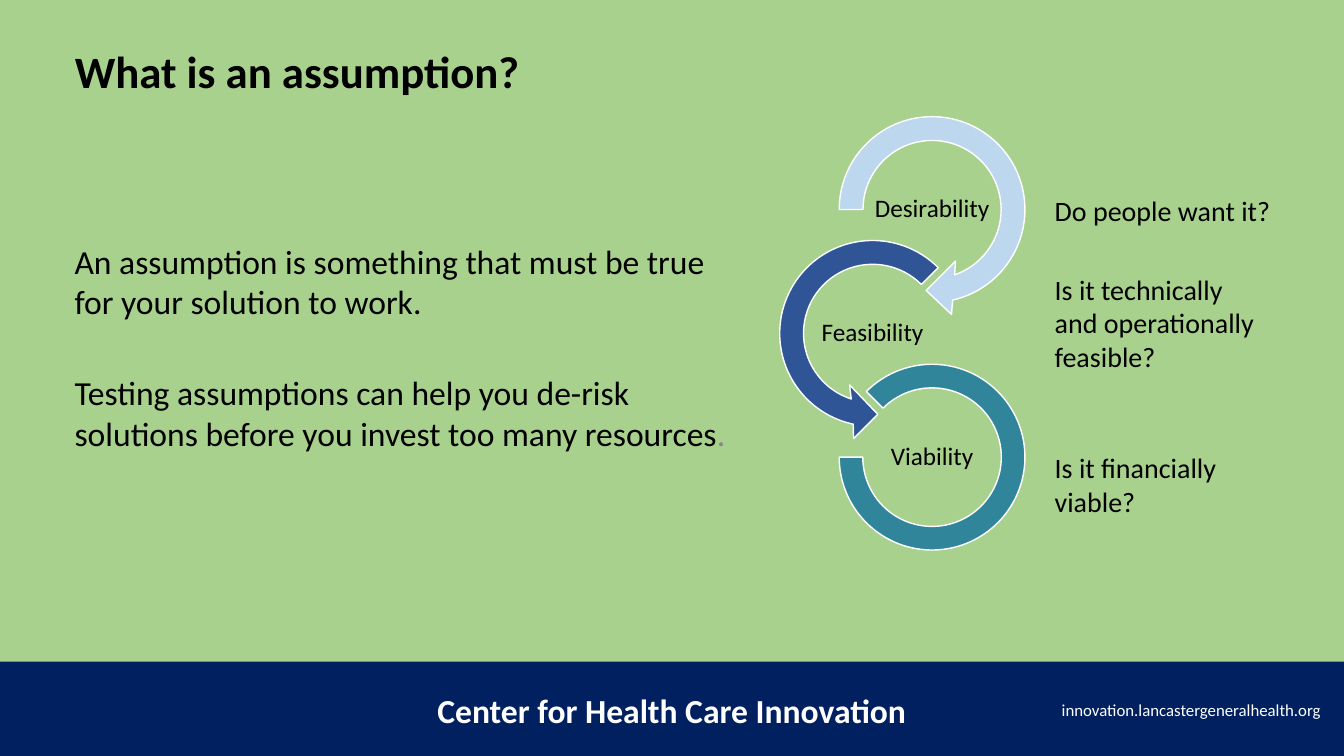
from math import cos, radians, sin, tan

from lxml.etree import Element
from pptx import Presentation
from pptx.dml.color import RGBColor
from pptx.enum.shapes import MSO_SHAPE as Preset
from pptx.enum.text import MSO_ANCHOR as Anchor, PP_ALIGN as Align
from pptx.oxml.ns import qn
from pptx.util import Cm, Pt

GREEN = RGBColor(0xA9, 0xD1, 0x8E)
NAVY = RGBColor(0x00, 0x20, 0x60)
PALE_BLUE = RGBColor(0xBD, 0xD7, 0xEE)
BLUE = RGBColor(0x2F, 0x55, 0x97)
TEAL = RGBColor(0x31, 0x85, 0x9B)
WHITE = RGBColor(0xFF, 0xFF, 0xFF)
BLACK = RGBColor(0x00, 0x00, 0x00)
GREY = RGBColor(0x88, 0x88, 0x88)

PAGE_WIDTH, PAGE_HEIGHT = 33.87, 19.05
BAND_TOP = 16.67
OUTER, INNER = 2.34, 1.74
RING_RIGHT, RING_LEFT = 23.49, 21.99
RING_TOP, RING_STEP = 5.28, 3.12
ARC_CURVES = 3


def style(para, size, color=BLACK, bold=False, align=Align.LEFT):
    para.alignment = align
    font = para.font
    font.name, font.size, font.bold = "Calibri", Pt(size), bold
    font.color.rgb = color


def add_text(page, place, lines, size, inset=(0.25, 0.13), gap=0, anchor=Anchor.TOP,
             spacing=None, **look):
    box = page.shapes.add_textbox(*map(Cm, place))
    frame = box.text_frame
    frame.word_wrap = True
    frame.vertical_anchor = anchor
    frame.margin_left = frame.margin_right = Cm(inset[0])
    frame.margin_top = frame.margin_bottom = Cm(inset[1])
    for index, line in enumerate(lines):
        para = frame.add_paragraph() if index else frame.paragraphs[0]
        para.text = line
        style(para, size, **look)
        if index:
            para.space_before = Pt(gap)
        if spacing:
            para.line_spacing = spacing
    return frame


def paint(shape, fill, outline=None):
    shape.shadow.inherit = False
    shape.fill.solid()
    shape.fill.fore_color.rgb = fill
    if outline is None:
        shape.line.fill.background()
    else:
        shape.line.color.rgb = outline
        shape.line.width = Pt(1)


def arc(center, radius, start, end):
    sweep = radians(end - start) / ARC_CURVES
    handle = 4 / 3 * tan(sweep / 4)

    def spot(angle, pull):
        return (center[0] + radius * (cos(angle) - pull * sin(angle)),
                center[1] + radius * (sin(angle) + pull * cos(angle)))

    points = [spot(radians(start), 0)]
    for step in range(ARC_CURVES):
        first = radians(start) + step * sweep
        last = first + sweep
        points += [spot(first, handle), spot(last, -handle), spot(last, 0)]
    return points


def bend(lines):
    for index in range(0, len(lines), 3):
        curve = Element(qn("a:cubicBezTo"))
        lines[index].addprevious(curve)
        for line in lines[index:index + 3]:
            curve.append(line[0])
            line.getparent().remove(line)


def add_ring_arrow(page, center, start, outer_end, inner_end, head, fill):
    outer = arc(center, OUTER, start, outer_end)
    inner = arc(center, INNER, inner_end, start)
    corners = [(Cm(x), Cm(y)) for x, y in outer + head + inner]
    builder = page.shapes.build_freeform(*corners[0])
    builder.add_line_segments(corners[1:])
    arrow = builder.convert_to_shape()
    lines = list(arrow.element.iter(qn("a:lnTo")))
    count = 3 * ARC_CURVES
    bend(lines[:count])
    bend(lines[-count:])
    paint(arrow, fill, WHITE)


def add_open_ring(page, center, fill):
    x, y = center
    ring = page.shapes.add_shape(Preset.BLOCK_ARC, Cm(x - OUTER), Cm(y - OUTER),
                                 Cm(2 * OUTER), Cm(2 * OUTER))
    for index, value in enumerate((135, 108, 0.127)):
        ring.adjustments[index] = value
    paint(ring, fill, WHITE)


def add_title(page, text):
    title = page.shapes.title
    title.left, title.top, title.width, title.height = map(Cm, (1.63, 0.97, 17.45, 1.7))
    title.text_frame.text = text
    title.text_frame.vertical_anchor = Anchor.TOP
    style(title.text_frame.paragraphs[0], 32, bold=True)


def add_footer(page):
    band = page.shapes.add_shape(Preset.RECTANGLE, 0, Cm(BAND_TOP), Cm(PAGE_WIDTH),
                                 Cm(PAGE_HEIGHT - BAND_TOP))
    paint(band, NAVY)
    add_text(page, (10.54, 17.25, 12.78, 1.27), ["Center for Health Care Innovation"], 24,
             color=WHITE, bold=True, align=Align.CENTER)
    add_text(page, (24.22, 17.5, 9.32, 0.76), ["innovation.lancastergeneralhealth.org"], 12,
             color=WHITE, align=Align.RIGHT)


def add_explanation(page):
    frame = add_text(page, (1.63, 5.93, 17.45, 5.8), [
        "An assumption is something that must be true for your solution to work.",
        "Testing assumptions can help you de-risk solutions before you invest too many resources",
    ], 24, gap=36.5)
    span = frame.paragraphs[-1].add_run()
    span.text = "."
    span.font.color.rgb = GREY


def add_rings(page):
    centers = [(x, RING_TOP + row * RING_STEP)
               for row, x in enumerate((RING_RIGHT, RING_LEFT, RING_RIGHT))]
    add_ring_arrow(page, centers[0], 180, 437.2, 430.9,
                   [(23.98, 7.92), (23.34, 7.32), (24.08, 6.58)], PALE_BLUE)
    add_ring_arrow(page, centers[1], 315, 102, 108,
                   [(21.51, 11.05), (22.12, 10.44), (21.41, 9.7)], BLUE)
    add_open_ring(page, centers[2], TEAL)
    for (x, y), label in zip(centers, ("Desirability", "Feasibility", "Viability")):
        add_text(page, (x - 1.51, y - 0.75, 3.02, 1.5), [label], 18, inset=(0.03, 0.03),
                 anchor=Anchor.MIDDLE, spacing=0.9, align=Align.CENTER)


def add_questions(page):
    for top, width, height, question in (
        (4.78, 5.92, 0.97, "Do people want it?"),
        (6.76, 5.49, 3.28, "Is it technically and operationally feasible?"),
        (11.25, 5.49, 1.73, "Is it financially viable?"),
    ):
        add_text(page, (26.4, top, width, height), [question], 20, inset=(0.18, 0.1))


def main():
    deck = Presentation()
    deck.slide_width, deck.slide_height = Cm(PAGE_WIDTH), Cm(PAGE_HEIGHT)
    page = deck.slides.add_slide(deck.slide_layouts[5])
    page.background.fill.solid()
    page.background.fill.fore_color.rgb = GREEN
    add_title(page, "What is an assumption?")
    add_footer(page)
    add_rings(page)
    add_questions(page)
    add_explanation(page)
    deck.save("out.pptx")


if __name__ == "__main__":
    main()
